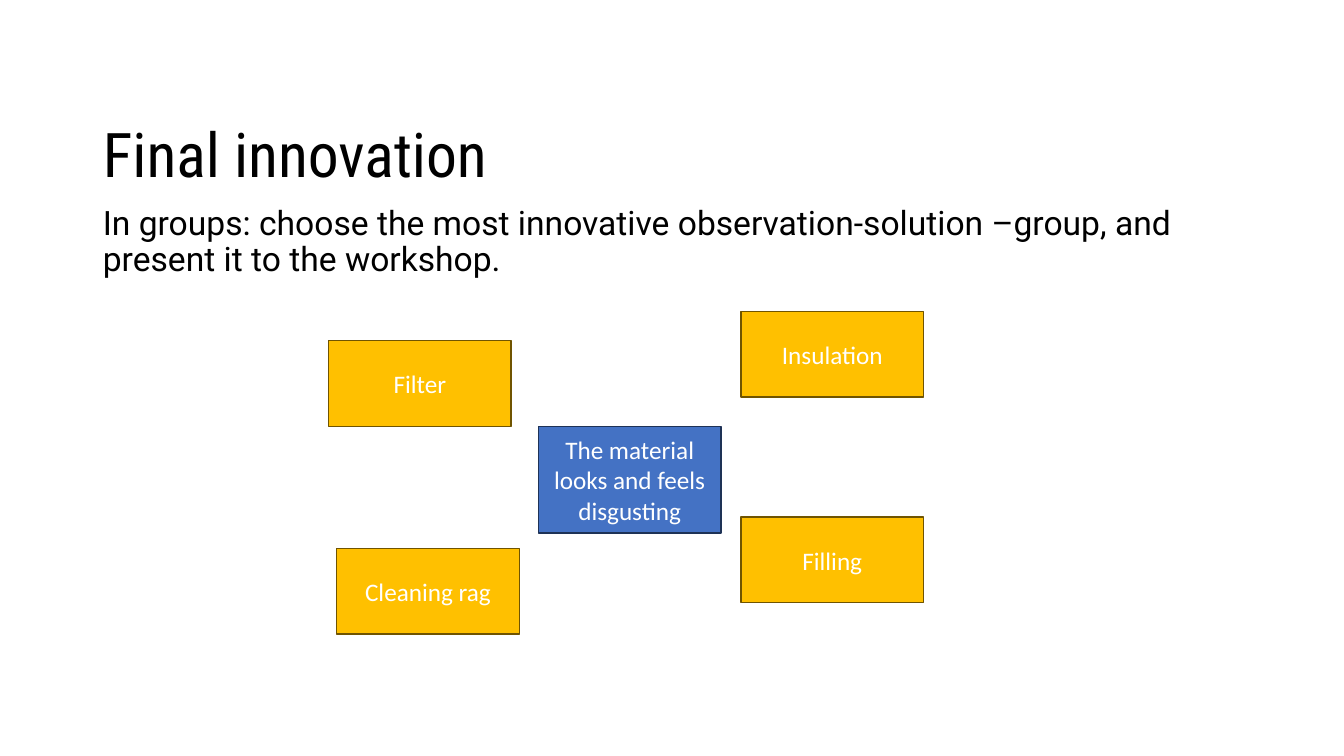
import dataclasses

import lxml.etree
import pptx
import pptx.dml.color
import pptx.enum.shapes
import pptx.enum.text
import pptx.oxml.ns
import pptx.util

EMU_PER_PX = 9144
CARD_WIDTH = 181
SOLUTION_HEIGHT = 85
BLUE, DARK_BLUE = "4472C4", "1E3256"
AMBER, DARK_AMBER = "FFC000", "705400"
BLACK, WHITE = "000000", "FFFFFF"


@dataclasses.dataclass(frozen=True)
class Card:
    text: str
    left: int
    top: int
    height: int = SOLUTION_HEIGHT
    fill: str = AMBER
    line: str = DARK_AMBER


CARDS = [
    Card("The material looks and feels disgusting", 534, 423, 106, BLUE, DARK_BLUE),
    Card("Insulation", 735, 309),
    Card("Filling", 735, 513),
    Card("Filter", 326, 338),
    Card("Cleaning rag", 334, 544),
]


def px(length: int) -> pptx.util.Emu:
    return pptx.util.Emu(length * EMU_PER_PX)


def color(value: str) -> pptx.dml.color.RGBColor:
    return pptx.dml.color.RGBColor.from_string(value)


def place(shape, left: int, top: int, width: int, height: int) -> None:
    shape.left, shape.top = px(left), px(top)
    shape.width, shape.height = px(width), px(height)


def write_text(
    shape,
    text: str,
    *,
    font: str,
    size: int,
    text_color: str,
    align=pptx.enum.text.PP_ALIGN.LEFT,
    anchor=pptx.enum.text.MSO_ANCHOR.MIDDLE,
    line_spacing: float = 1.0,
) -> None:
    frame = shape.text_frame
    frame.text = text
    frame.word_wrap = True
    frame.auto_size = pptx.enum.text.MSO_AUTO_SIZE.NONE
    frame.vertical_anchor = anchor
    paragraph = frame.paragraphs[0]
    paragraph.alignment = align
    paragraph.line_spacing = line_spacing
    paragraph.space_before = pptx.util.Pt(0)
    run_font = paragraph.runs[0].font
    run_font.name = font
    run_font.size = pptx.util.Pt(size)
    run_font.color.rgb = color(text_color)


def remove_bullet(paragraph) -> None:
    properties = paragraph._p.get_or_add_pPr()
    properties.set("marL", "0")
    properties.set("indent", "0")
    lxml.etree.SubElement(properties, pptx.oxml.ns.qn("a:buNone"))


def draw_card(slide, card: Card) -> None:
    shape = slide.shapes.add_shape(
        pptx.enum.shapes.MSO_SHAPE.RECTANGLE,
        px(card.left), px(card.top), px(CARD_WIDTH), px(card.height),
    )
    shape.shadow.inherit = False
    shape.fill.solid()
    shape.fill.fore_color.rgb = color(card.fill)
    shape.line.color.rgb = color(card.line)
    shape.line.width = pptx.util.Pt(1)
    write_text(
        shape, card.text, font="Calibri", size=18, text_color=WHITE,
        align=pptx.enum.text.PP_ALIGN.CENTER,
    )


def main() -> None:
    presentation = pptx.Presentation()
    presentation.slide_width = px(1333)
    presentation.slide_height = px(750)
    slide = presentation.slides.add_slide(presentation.slide_layouts[1])

    title = slide.shapes.title
    place(title, 92, 84, 1150, 145)
    write_text(
        title, "Final innovation", font="Roboto Condensed", size=44,
        text_color=BLACK, line_spacing=0.9,
    )

    body = slide.placeholders[1]
    place(body, 92, 200, 1113, 85)
    write_text(
        body,
        "In groups: choose the most innovative observation-solution –group, "
        "and present it to the workshop.",
        font="Roboto", size=24, text_color=BLACK,
        anchor=pptx.enum.text.MSO_ANCHOR.TOP, line_spacing=0.9,
    )
    remove_bullet(body.text_frame.paragraphs[0])

    for card in CARDS:
        draw_card(slide, card)

    presentation.save("out.pptx")


if __name__ == "__main__":
    main()
